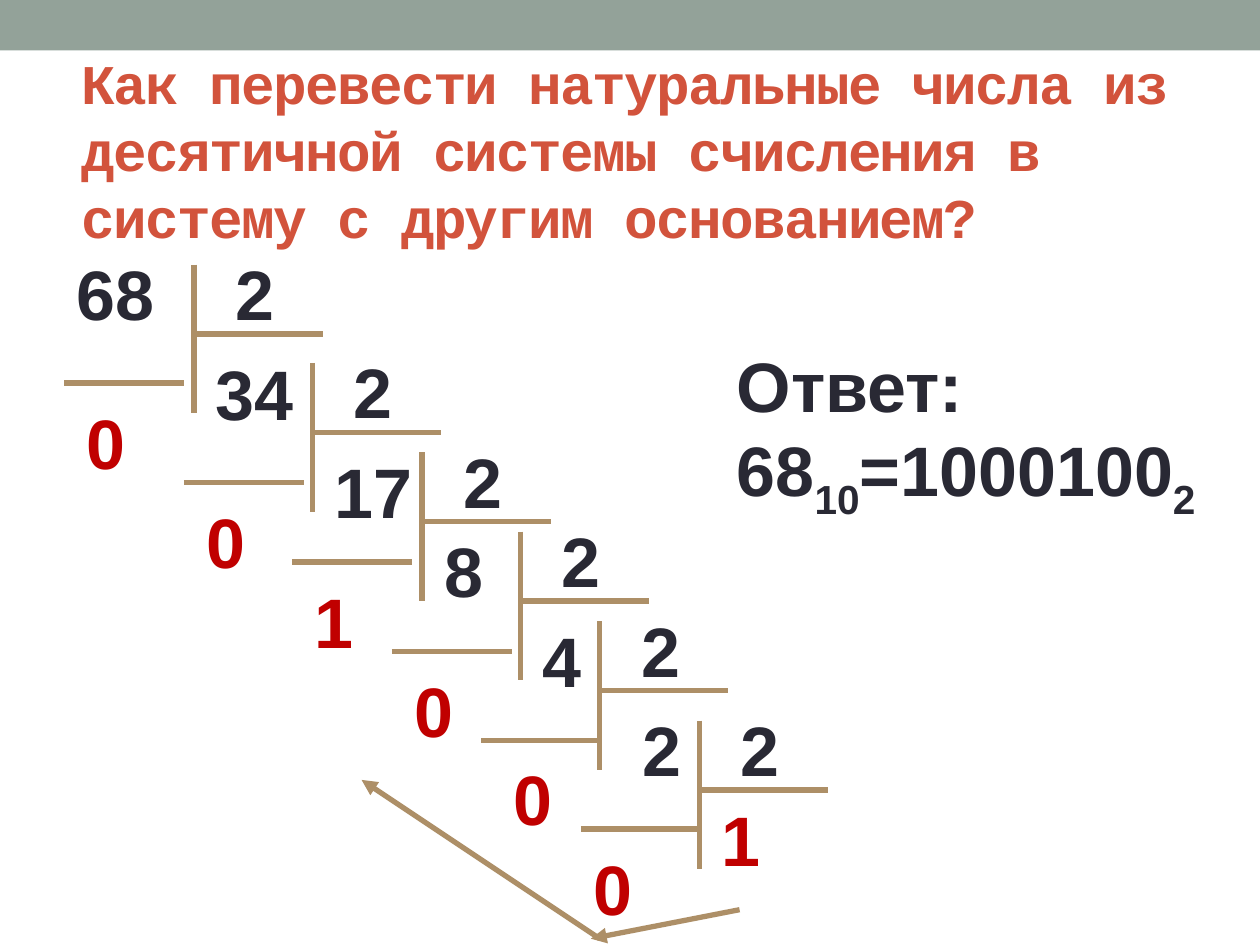
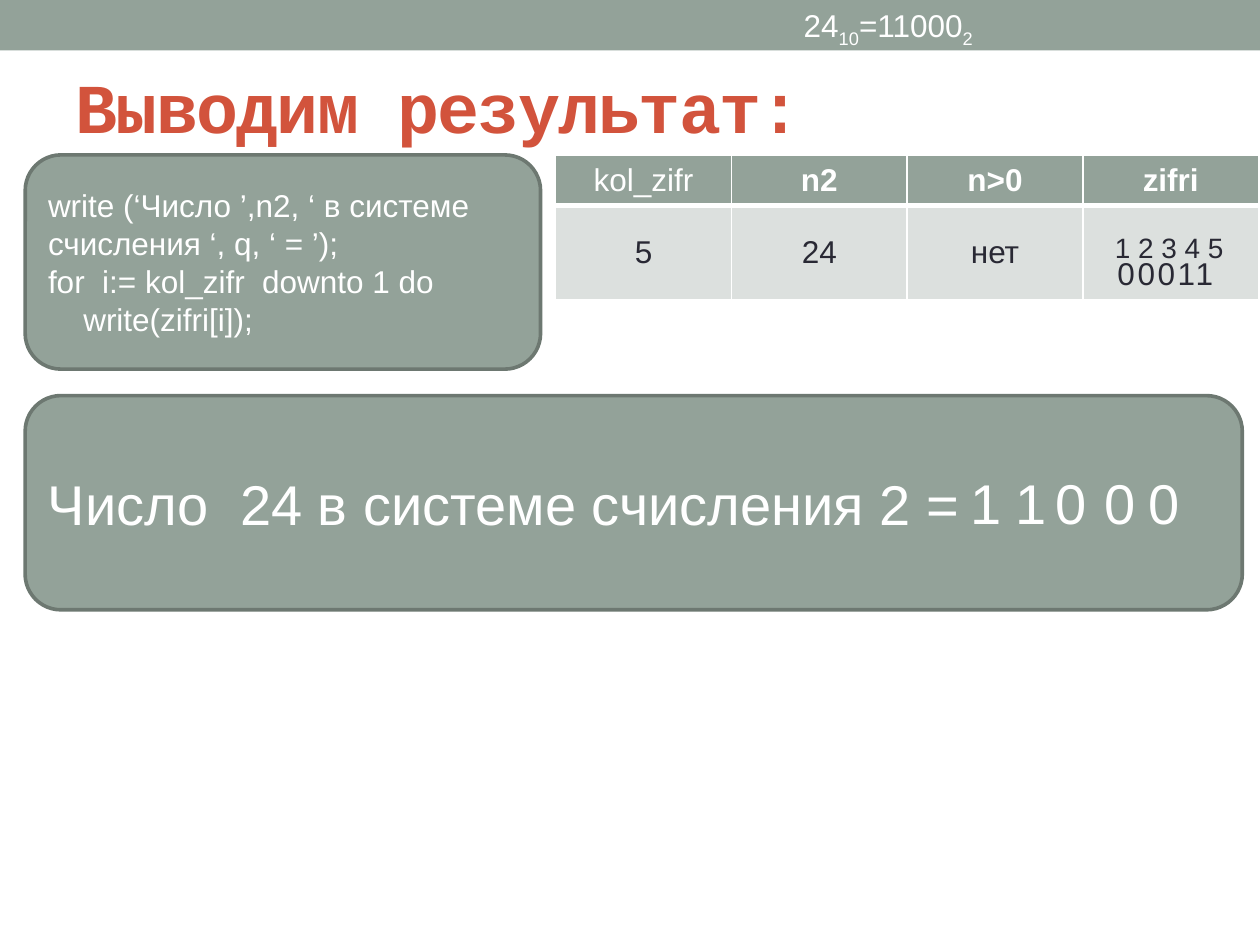
from lxml.etree import SubElement
from pptx import Presentation
from pptx.dml.color import RGBColor
from pptx.enum.shapes import MSO_CONNECTOR, MSO_SHAPE
from pptx.enum.text import MSO_ANCHOR, MSO_AUTO_SIZE, PP_ALIGN
from pptx.oxml.ns import qn
from pptx.util import Emu, Pt

PX = 9144  # 100 px to the inch
COLORS = {
    "band": "93A299",
    "outline": "6D7871",
    "title": "D2533C",
    "text": "292934",
    "remainder": "C00000",
    "line": "AD8F67",
    "cell": "DCE0DE",
    "white": "FFFFFF",
}
TITLE_FONT, BODY_FONT = "Courier New", "Arial"

# Corner of each division, its dividend, the dash under it and its remainder
DIVISIONS = [
    ((154, 210), ("68", 51, 194), (51, 304), ("0", 59, 312)),
    ((248, 288), ("34", 161, 273), (146, 383), ("0", 154, 391)),
    ((335, 359), ("17", 256, 351), (232, 446), ("1", 240, 454)),
    ((413, 422), ("8", 343, 414), (311, 517), ("0", 319, 525)),
    ((476, 493), ("4", 421, 485), (382, 588), ("0", 398, 595)),
    ((555, 572), ("2", 500, 556), (461, 658), ("0", 461, 666)),
]
TABLE_ROWS = [["kol_zifr", "n2", "n>0", "zifri"], ["5", "24", "нет", ""]]
RESULT_DIGITS = [("1", 760), ("1", 796), ("0", 828), ("0", 867), ("0", 902)]


def px(*lengths):
    return [Emu(length * PX) for length in lengths]


def rgb(name):
    return RGBColor.from_string(COLORS[name])


def set_font(paragraph, size, color, bold=False, name=BODY_FONT):
    font = paragraph.font
    font.name, font.size, font.bold = name, Pt(size), bold
    font.color.rgb = rgb(color)


def set_spacing(run, points):
    """Set the distance between letters."""
    run.font._element.set("spc", str(int(points * 100)))


def add_runs(paragraph, text):
    """Add text in which every part between underscores is a subscript."""
    for index, part in enumerate(text.split("_")):
        if part:
            run = paragraph.add_run()
            run.text = part
            if index % 2:
                run.font._element.set("baseline", "-25000")


def add_text(slide, text, box, size, color="text", bold=False, wrap=True):
    frame = slide.shapes.add_textbox(*px(*box)).text_frame
    frame.word_wrap = wrap
    frame.auto_size = MSO_AUTO_SIZE.SHAPE_TO_FIT_TEXT
    paragraph = frame.paragraphs[0]
    add_runs(paragraph, text)
    set_font(paragraph, size, color, bold)
    return paragraph


def add_number(slide, text, left, top, width=94, color="text"):
    add_text(slide, text, (left, top, width, 77), 40, color, bold=True)


def add_line(slide, start, end, arrow=False):
    connector = slide.shapes.add_connector(MSO_CONNECTOR.STRAIGHT, *px(*start, *end))
    connector.line.color.rgb = rgb("line")
    connector.line.width = Pt(3)
    if arrow:
        SubElement(connector.line._get_or_add_ln(), qn("a:tailEnd"), type="triangle")
    SubElement(connector._element.spPr, qn("a:effectLst"))


def add_filled_shape(slide, preset, box):
    shape = slide.shapes.add_shape(preset, *px(*box))
    shape.shadow.inherit = False
    shape.fill.solid()
    shape.fill.fore_color.rgb = rgb("band")
    shape.line.fill.background()
    return shape


def add_panel(slide, lines, box, size):
    shape = add_filled_shape(slide, MSO_SHAPE.ROUNDED_RECTANGLE, box)
    shape.line.color.rgb = rgb("outline")
    shape.line.width = Pt(2.08)
    frame = shape.text_frame
    frame.word_wrap = True
    frame.vertical_anchor = MSO_ANCHOR.MIDDLE
    frame.text = "\n".join(lines)
    for paragraph in frame.paragraphs:
        paragraph.alignment = PP_ALIGN.LEFT
        set_font(paragraph, size, "white")
    return frame


def add_titled_slide(presentation, text, box, size):
    slide = presentation.slides.add_slide(presentation.slide_layouts[5])
    add_filled_shape(slide, MSO_SHAPE.RECTANGLE, (0, 0, 1000, 40))
    title = slide.shapes.title
    title.left, title.top, title.width, title.height = px(*box)
    frame = title.text_frame
    frame.text = text
    frame.word_wrap = True
    frame.auto_size = MSO_AUTO_SIZE.NONE
    frame.vertical_anchor = MSO_ANCHOR.MIDDLE
    paragraph = frame.paragraphs[0]
    paragraph.alignment = PP_ALIGN.LEFT
    set_font(paragraph, size, "title", True, TITLE_FONT)
    set_spacing(paragraph.runs[0], -1)
    return slide


def set_borders(cell, widths):
    """Draw white borders; widths are points for left, right, top, bottom."""
    properties = cell._tc.get_or_add_tcPr()
    for index, (side, width) in enumerate(zip("LRTB", widths)):
        border = properties.makeelement(qn(f"a:ln{side}"), w=str(Pt(width)))
        fill = SubElement(border, qn("a:solidFill"))
        SubElement(fill, qn("a:srgbClr"), val=COLORS["white"])
        properties.insert(index, border)


def add_state_table(slide):
    table = slide.shapes.add_table(2, 4, *px(441, 123, 558, 115)).table
    table.first_row = table.horz_banding = False
    for row, height in zip(table.rows, px(40, 75)):
        row.height = height
    for row_index, texts in enumerate(TABLE_ROWS):
        header = row_index == 0
        for column_index, text in enumerate(texts):
            cell = table.cell(row_index, column_index)
            cell.text = text
            cell.vertical_anchor = MSO_ANCHOR.MIDDLE
            cell.fill.solid()
            cell.fill.fore_color.rgb = rgb("band" if header else "cell")
            set_borders(cell, (1, 1, 1, 3) if header else (1, 1, 3, 1))
            paragraph = cell.text_frame.paragraphs[0]
            paragraph.alignment = PP_ALIGN.CENTER
            set_font(paragraph, 18, "white" if header else "text",
                     bold=header and column_index > 0)


def add_division(slide, corner, dividend, dash, remainder):
    x, y = corner
    add_line(slide, corner, (x, y + 118))
    add_line(slide, (x, y + 55), (x + 102, y + 55))
    add_number(slide, "2", x + 23, y - 16, 71)
    add_number(slide, *dividend)
    add_line(slide, dash, (dash[0] + 95, dash[1]))
    add_number(slide, *remainder, color="remainder")


def build_division_slide(presentation):
    slide = add_titled_slide(
        presentation,
        "Как перевести натуральные числа из десятичной системы счисления "
        "в систему с другим основанием?",
        (55, 35, 949, 167), 32)
    for division in DIVISIONS:
        add_division(slide, *division)
    add_number(slide, "1", 563, 627, color="remainder")
    add_text(slide, "Ответ: 68_10_=1000100_2_", (575, 267, 425, 143), 40, bold=True)
    add_line(slide, (587, 722), (469, 745), arrow=True)
    add_line(slide, (476, 745), (287, 619), arrow=True)


def build_result_slide(presentation):
    slide = add_titled_slide(presentation, "Выводим результат:", (50, 44, 900, 79), 40)
    code = add_panel(slide, [
        "write (‘Число ’,n2, ‘ в системе счисления ‘, q, ‘ = ’);",
        "for  i:= kol_zifr  downto 1 do",
        "write(zifri[i]);",
    ], (20, 123, 409, 170), 18)
    code.paragraphs[-1]._p.get_or_add_pPr().set("marL", str(28 * PX))
    add_state_table(slide)
    add_text(slide, "24_10_=11000_2_", (628, 0, 159, 40), 18, "white", wrap=False)
    digits = add_text(slide, "00011", (877, 197, 108, 40), 18)
    set_spacing(digits.runs[0], 1.5)
    add_text(slide, "1 2 3 4 5", (875, 178, 115, 37), 16)
    add_panel(slide, ["Число  24 в системе счисления 2 ="], (20, 314, 966, 170), 32)
    for digit, left in RESULT_DIGITS:
        add_text(slide, digit, (left, 367, 58, 64), 32, "white")


def main():
    presentation = Presentation()
    presentation.slide_width, presentation.slide_height = px(1000, 750)
    build_division_slide(presentation)
    build_result_slide(presentation)
    presentation.save("out.pptx")


if __name__ == "__main__":
    main()
